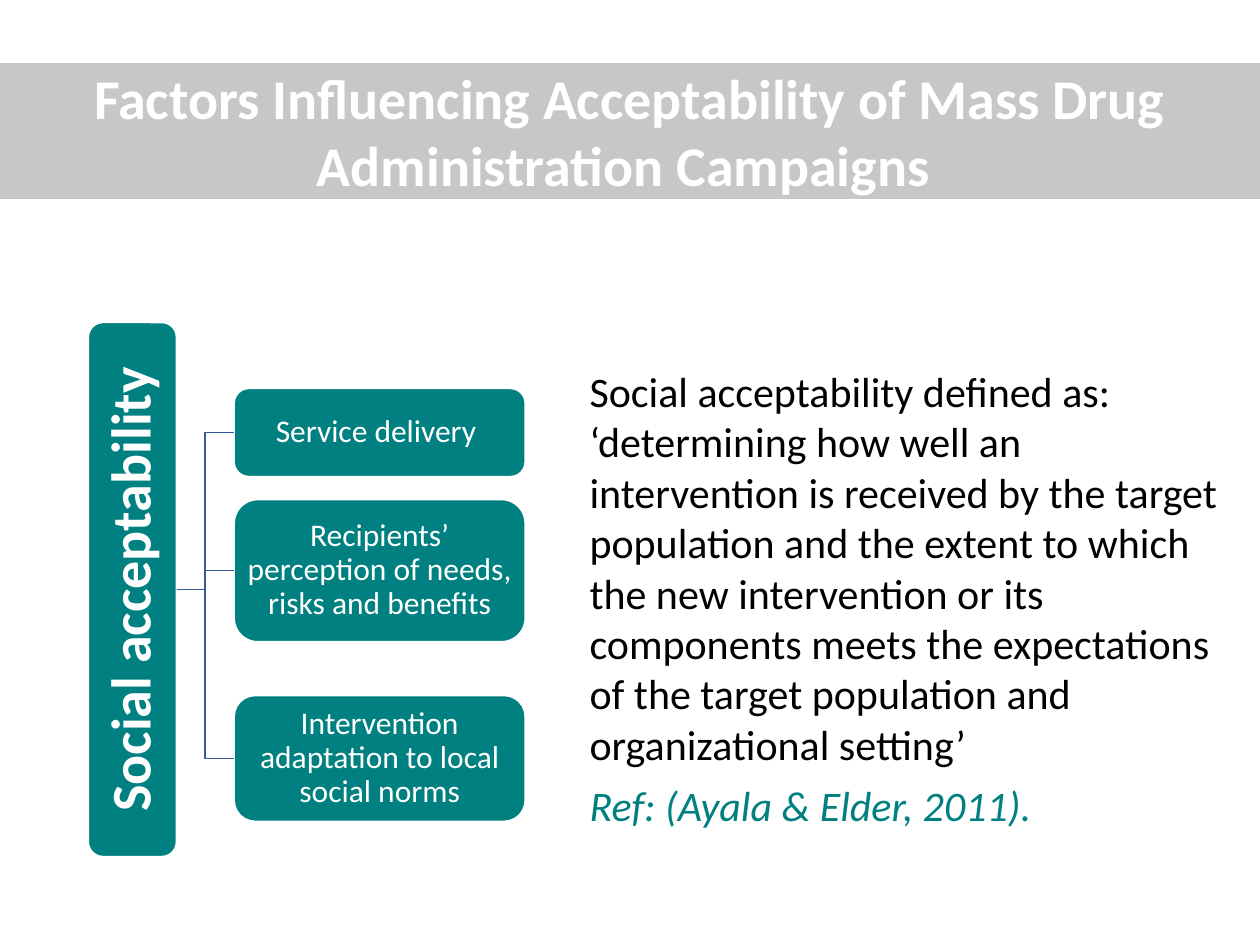
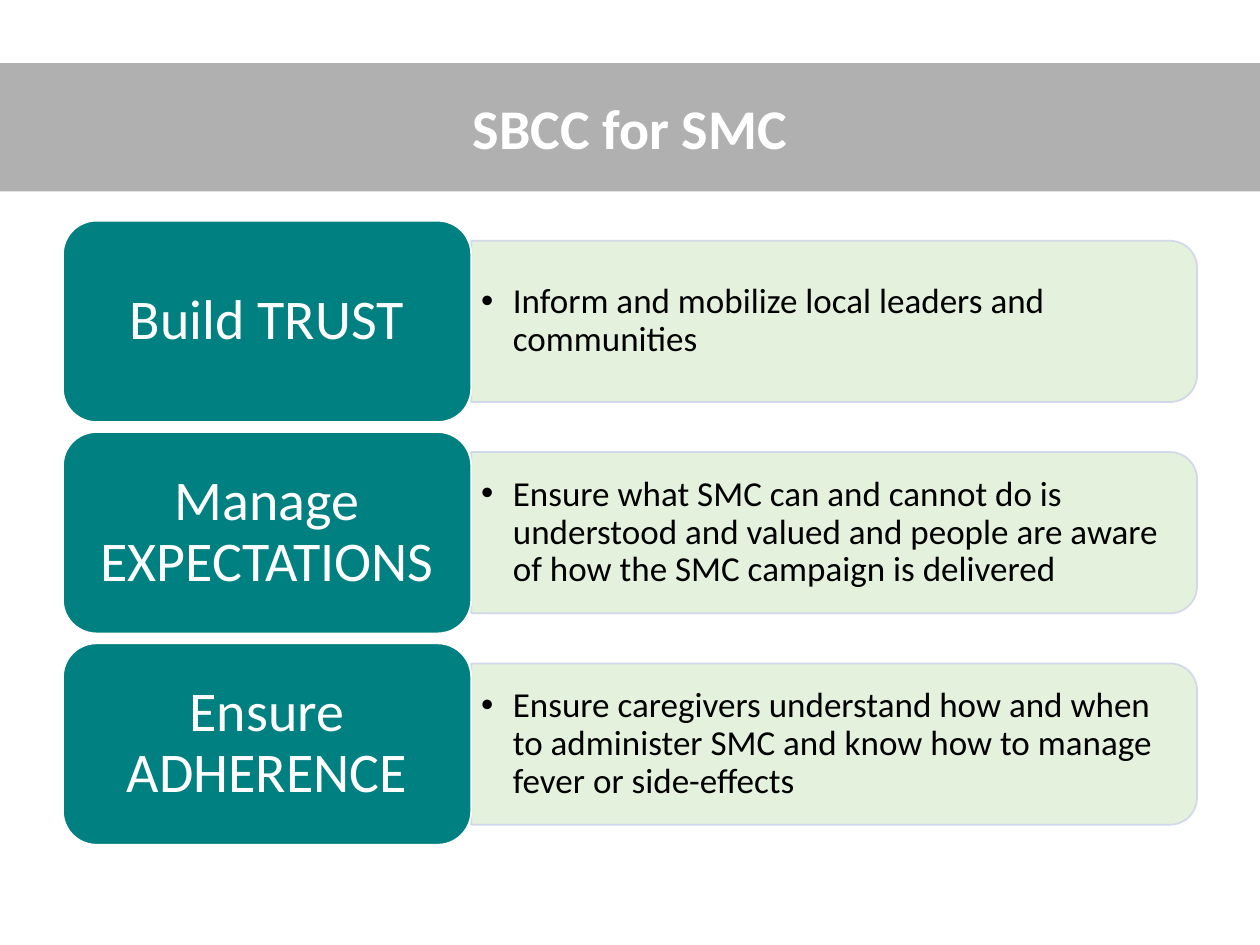
from dataclasses import dataclass
from typing import NamedTuple

from lxml.etree import SubElement
from pptx import Presentation
from pptx.dml.color import RGBColor
from pptx.enum.shapes import MSO_CONNECTOR, MSO_SHAPE
from pptx.enum.text import MSO_ANCHOR, MSO_AUTO_SIZE, PP_ALIGN
from pptx.oxml.ns import qn
from pptx.util import Cm, Pt


@dataclass(frozen=True)
class Theme:
    font: str = "Calibri"
    teal: str = "008080"
    mint: str = "E2F0D9"
    mint_edge: str = "CFD5EA"
    link: str = "365B9D"
    white: str = "FFFFFF"
    black: str = "000000"
    light_band: str = "A6A6A6"
    dark_band: str = "808080"
    heading: int = 32
    body: int = 24
    detail: int = 20
    factor: int = 18
    line: int = 1
    band_opacity: int = 62
    panel_opacity: int = 90


class Frame(NamedTuple):
    left: float
    top: float
    width: float
    height: float

    def lengths(self) -> tuple:
        return tuple(Cm(value) for value in self)

    def quarter_turned(self) -> "Frame":
        shift = (self.width - self.height) / 2
        return Frame(self.left + shift, self.top - shift, self.height, self.width)


class Factor(NamedTuple):
    text: str
    top: float
    height: float


class Goal(NamedTuple):
    name: str
    detail: str


THEME = Theme()
SLIDE_WIDTH, SLIDE_HEIGHT = 25.4, 19.05
BAND_TOP = 1.27

SPINE = Frame(1.78, 6.5, 1.78, 10.77)
FACTOR_LEFT, FACTOR_WIDTH = 4.72, 5.87
FACTORS = [
    Factor("Service delivery ", 7.83, 1.78),
    Factor("Recipients’ perception of needs, risks and benefits", 10.07, 2.87),
    Factor("Intervention adaptation to local social norms", 14.02, 2.54),
]
DEFINITION = Frame(11.63, 7.24, 13.21, 10.29)

GOAL = Frame(1.27, 4.45, 8.23, 4.06)
GOAL_PITCH = 4.26
PANEL_WIDTH, PANEL_HEIGHT = 14.63, 3.25
DETAIL_WIDTH, DETAIL_HEIGHT = 14.48, 2.92
GOALS = [
    Goal("Build TRUST", "Inform and mobilize local leaders and communities"),
    Goal("Manage EXPECTATIONS",
         "Ensure what SMC can and cannot do is understood and valued and people "
         "are aware of how the SMC campaign is delivered"),
    Goal("Ensure ADHERENCE",
         "Ensure caregivers understand how and when to administer SMC and know "
         "how to manage fever or side-effects"),
]


def place(target, frame: Frame) -> None:
    target.left, target.top, target.width, target.height = frame.lengths()


def set_opacity(fill_parent, percent: int) -> None:
    color = next(fill_parent.iter(qn("a:srgbClr")))
    SubElement(color, qn("a:alpha")).set("val", str(percent * 1000))


def paint(target, color: str, opacity: int = 100) -> None:
    target.fill.solid()
    target.fill.fore_color.rgb = RGBColor.from_string(color)
    if opacity < 100:
        set_opacity(target._element.spPr.find(qn("a:solidFill")), opacity)


def outline(target, color: str) -> None:
    target.line.color.rgb = RGBColor.from_string(color)
    target.line.width = Pt(THEME.line)


def set_insets(text_frame, across: float, down: float) -> None:
    text_frame.margin_left = text_frame.margin_right = Cm(across)
    text_frame.margin_top = text_frame.margin_bottom = Cm(down)


def write(paragraph, text: str, size: int, color: str,
          bold: bool = False, italic: bool = False) -> None:
    run = paragraph.add_run()
    run.text = text
    run.font.name = THEME.font
    run.font.size = Pt(size)
    run.font.bold = bold
    run.font.italic = italic
    run.font.color.rgb = RGBColor.from_string(color)


def set_indent(paragraph, margin: float, bullet: str = "") -> None:
    properties = paragraph._p.get_or_add_pPr()
    properties.set("marL", str(Cm(margin)))
    properties.set("indent", str(-Cm(margin)))
    if bullet:
        SubElement(properties, qn("a:buFont")).set("typeface", "Arial")
        SubElement(properties, qn("a:buChar")).set("char", bullet)
    else:
        SubElement(properties, qn("a:buNone"))


def add_title_band(slide, text: str, color: str, height: float) -> None:
    title = slide.shapes.title
    place(title, Frame(0, BAND_TOP, SLIDE_WIDTH, height))
    paint(title, color, THEME.band_opacity)
    words = title.text_frame
    words.auto_size = MSO_AUTO_SIZE.NONE
    words.vertical_anchor = MSO_ANCHOR.MIDDLE
    words.paragraphs[0].alignment = PP_ALIGN.CENTER
    write(words.paragraphs[0], text, THEME.heading, THEME.white, bold=True)


def add_teal_box(slide, frame: Frame, text: str, size: int,
                 insets: tuple[float, float], bold: bool = False):
    box = slide.shapes.add_shape(MSO_SHAPE.ROUNDED_RECTANGLE, *frame.lengths())
    box.shadow.inherit = False
    paint(box, THEME.teal)
    outline(box, THEME.white)
    words = box.text_frame
    words.word_wrap = True
    words.vertical_anchor = MSO_ANCHOR.MIDDLE
    set_insets(words, *insets)
    paragraph = words.paragraphs[0]
    paragraph.alignment = PP_ALIGN.CENTER
    paragraph.line_spacing = 0.9
    write(paragraph, text, size, THEME.white, bold)
    return box


def add_branch(slide, spine, factor_box) -> None:
    branch = slide.shapes.add_connector(MSO_CONNECTOR.ELBOW, 0, 0, 0, 0)
    branch.begin_connect(spine, 3)
    branch.end_connect(factor_box, 1)
    outline(branch, THEME.link)
    SubElement(branch._element.spPr, qn("a:effectLst"))


def add_detail(slide, text: str, left: float, middle: float) -> None:
    panel_frame = Frame(left, middle - PANEL_HEIGHT / 2, PANEL_WIDTH, PANEL_HEIGHT)
    panel = slide.shapes.add_shape(MSO_SHAPE.ROUND_2_SAME_RECTANGLE,
                                   *panel_frame.quarter_turned().lengths())
    panel.rotation = 90
    panel.shadow.inherit = False
    paint(panel, THEME.mint, THEME.panel_opacity)
    outline(panel, THEME.mint_edge)
    set_opacity(panel._element.spPr.find(qn("a:ln")), THEME.panel_opacity)

    words_frame = Frame(left, middle - DETAIL_HEIGHT / 2, DETAIL_WIDTH, DETAIL_HEIGHT)
    words = slide.shapes.add_textbox(*words_frame.lengths()).text_frame
    words.word_wrap = True
    words.vertical_anchor = MSO_ANCHOR.MIDDLE
    set_insets(words, 0.2, 0.1)
    paragraph = words.paragraphs[0]
    set_indent(paragraph, 0.64, "•")
    paragraph.line_spacing = 0.9
    write(paragraph, text, THEME.detail, THEME.black)


def add_definition(slide) -> None:
    definition = slide.placeholders[1]
    place(definition, DEFINITION)
    words = definition.text_frame
    words.auto_size = MSO_AUTO_SIZE.SHAPE_TO_FIT_TEXT
    statement, reference = words.paragraphs[0], words.add_paragraph()
    for paragraph in (statement, reference):
        set_indent(paragraph, 0)
        paragraph.space_before = Pt(0)
        paragraph.space_after = Pt(6)
    write(statement,
          "Social acceptability defined as: ‘determining how well an intervention is "
          "received by the target population and the extent to which the new "
          "intervention or its components meets the expectations of the target "
          "population and organizational setting’", THEME.body, THEME.black)
    write(reference, "Ref: (Ayala & Elder, 2011).", THEME.body, THEME.teal, italic=True)


def build_factors(presentation) -> None:
    slide = presentation.slides.add_slide(presentation.slide_layouts[1])
    add_title_band(
        slide, "Factors Influencing Acceptability of Mass Drug Administration Campaigns ",
        THEME.light_band, 2.74)
    spine = add_teal_box(slide, SPINE, "Social acceptability", THEME.heading,
                         (0.05, 0.05), bold=True)
    spine.text_frame._txBody.bodyPr.set("vert", "vert270")
    for factor in FACTORS:
        frame = Frame(FACTOR_LEFT, factor.top, FACTOR_WIDTH, factor.height)
        factor_box = add_teal_box(slide, frame, factor.text, THEME.factor, (0.03, 0.03))
        add_branch(slide, spine, factor_box)
    add_definition(slide)


def build_goals(presentation) -> None:
    slide = presentation.slides.add_slide(presentation.slide_layouts[5])
    add_title_band(slide, "SBCC for SMC", THEME.dark_band, 2.59)
    for row, goal in enumerate(GOALS):
        frame = GOAL._replace(top=GOAL.top + row * GOAL_PITCH)
        add_detail(slide, goal.detail, frame.left + frame.width,
                   frame.top + frame.height / 2)
        add_teal_box(slide, frame, goal.name, THEME.heading, (0.33, 0.17))


def main() -> None:
    presentation = Presentation()
    presentation.slide_width = Cm(SLIDE_WIDTH)
    presentation.slide_height = Cm(SLIDE_HEIGHT)
    build_factors(presentation)
    build_goals(presentation)
    presentation.save("out.pptx")


if __name__ == "__main__":
    main()
